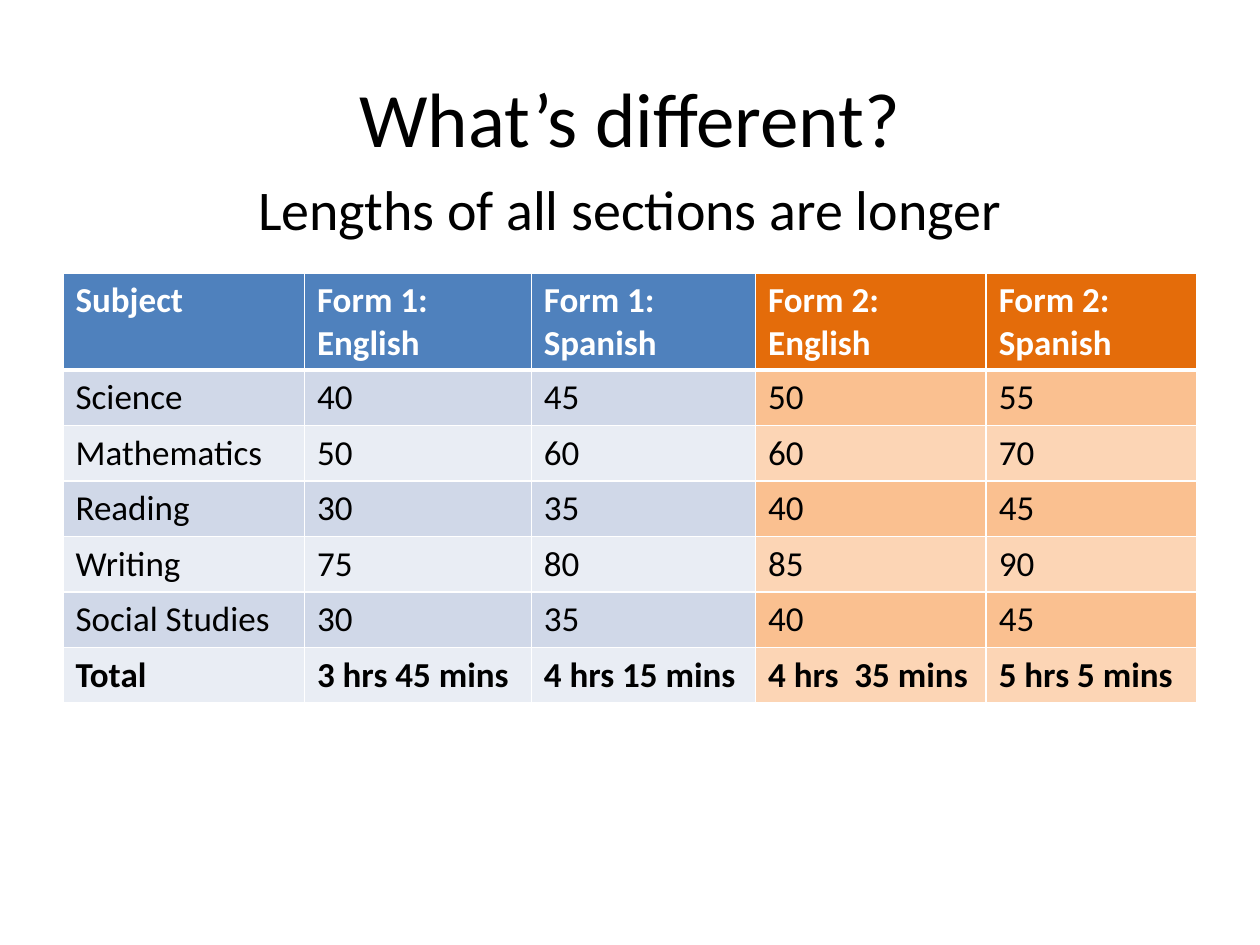
from lxml.etree import SubElement
from pptx import Presentation
from pptx.dml.color import RGBColor
from pptx.enum.text import MSO_ANCHOR as ANCHOR, PP_ALIGN as ALIGN
from pptx.oxml.ns import qn
from pptx.util import Pt

BLACK = RGBColor(0x00, 0x00, 0x00)
WHITE = RGBColor(0xFF, 0xFF, 0xFF)
FORM1_FILLS = [RGBColor(0x4F, 0x81, 0xBD), RGBColor(0xD0, 0xD8, 0xE8), RGBColor(0xE9, 0xED, 0xF4)]
FORM2_FILLS = [RGBColor(0xE4, 0x6C, 0x0A), RGBColor(0xFA, 0xC0, 0x90), RGBColor(0xFC, 0xD5, 0xB5)]

COL_WIDTHS = [138, 129.6, 128.2, 131.8, 120.4]
HEADER_HEIGHT, ROW_HEIGHT = 55.5, 31.7
ROWS = [
    ["Subject", "Form 1: English", "Form 1: Spanish", "Form 2: English", "Form 2: Spanish"],
    ["Science", "40", "45", "50", "55"],
    ["Mathematics", "50", "60", "60", "70"],
    ["Reading", "30", "35", "40", "45"],
    ["Writing", "75", "80", "85", "90"],
    ["Social Studies", "30", "35", "40", "45"],
    ["Total", "3 hrs 45 mins", "4 hrs 15 mins", "4 hrs  35 mins", "5 hrs 5 mins"],
]


def write(tf, text, size, color=BLACK, bold=False, align=ALIGN.LEFT):
    """Fill a text frame with one formatted paragraph."""
    p = tf.paragraphs[0]
    p.alignment = align
    r = p.add_run()
    r.text = text
    r.font.color.rgb = color
    for name, value in {"name": "Calibri", "size": Pt(size), "bold": bold}.items():
        setattr(r.font, name, value)


def set_borders(cell, widths):
    """Draw white borders of the given widths on the sides of a cell."""
    tcPr = cell._tc.get_or_add_tcPr()
    for side, width in widths.items():
        ln = SubElement(tcPr, qn(f"a:ln{side}"), w=str(Pt(width)))
        fill = SubElement(ln, qn("a:solidFill"))
        SubElement(fill, qn("a:srgbClr"), val=str(WHITE))


def place_title(s, text, x, y, w, h):
    """Position and format the title placeholder."""
    sp = s.shapes.title
    sp.left, sp.top, sp.width, sp.height = Pt(x), Pt(y), Pt(w), Pt(h)
    sp.text_frame.vertical_anchor = ANCHOR.MIDDLE
    write(sp.text_frame, text, 44, align=ALIGN.CENTER)


def place_statement(s, text, x, y, w, h):
    """Add the centred statement above the table."""
    tf = s.shapes.add_textbox(Pt(x), Pt(y), Pt(w), Pt(h)).text_frame
    tf.word_wrap = True
    write(tf, text, 32, align=ALIGN.CENTER)


def place_times(s, rows, x, y):
    """Add the table of section lengths for both forms."""
    heights = [HEADER_HEIGHT] + [ROW_HEIGHT] * (len(rows) - 1)
    table = s.shapes.add_table(len(rows), len(COL_WIDTHS), Pt(x), Pt(y),
                               Pt(sum(COL_WIDTHS)), Pt(sum(heights))).table
    for col, width in zip(table.columns, COL_WIDTHS):
        col.width = Pt(width)
    for i, (values, height) in enumerate(zip(rows, heights)):
        table.rows[i].height = Pt(height)
        header, total = i == 0, i == len(rows) - 1
        shade = 0 if header else 2 - i % 2
        for j, value in enumerate(values):
            cell = table.cell(i, j)
            set_borders(cell, {"L": 1, "R": 1, "T": 3 if i == 1 else 1, "B": 3 if header else 1})
            cell.fill.solid()
            cell.fill.fore_color.rgb = (FORM1_FILLS if j < 3 else FORM2_FILLS)[shade]
            write(cell.text_frame, value, 20, WHITE if header else BLACK, header or total)


def main():
    """Build and save the slide."""
    prs = Presentation()
    prs.slide_width, prs.slide_height = Pt(720), Pt(540)
    s = prs.slides.add_slide(prs.slide_layouts[5])
    place_title(s, "What’s different?", 36, 21.6, 648, 90)
    place_statement(s, "Lengths of all sections are longer", 36, 96, 648, 356.4)
    place_times(s, ROWS, 36, 156)
    prs.save("out.pptx")


if __name__ == "__main__":
    main()
